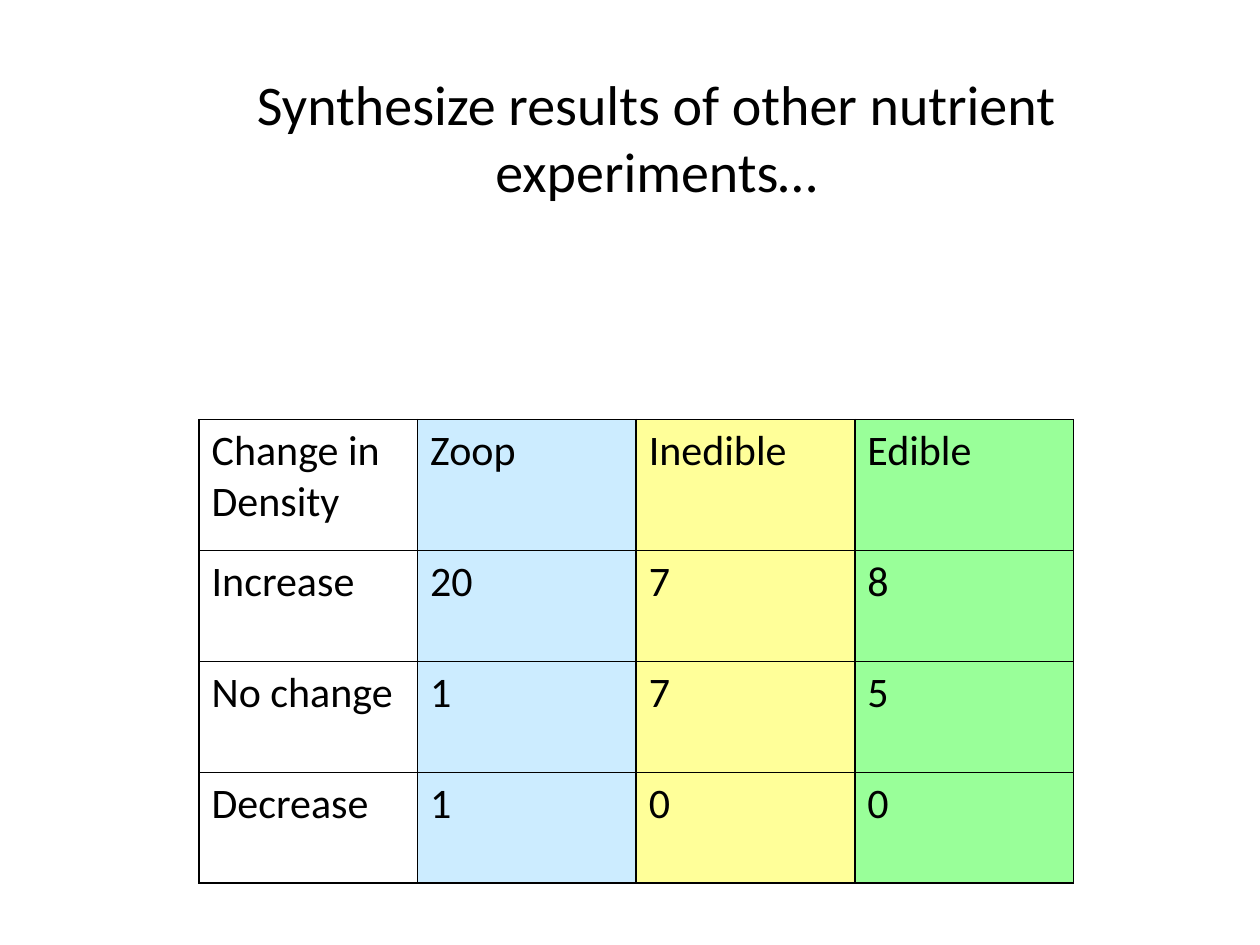
import pptx
import pptx.dml.color
import pptx.enum.text
import pptx.oxml
import pptx.oxml.ns
import pptx.util

Inches = pptx.util.Inches
COLORS = {"ink": "000000", "zoop": "CCECFF", "inedible": "FFFF99", "edible": "99FF99"}
COLUMN_FILLS = [None, "zoop", "inedible", "edible"]
ROW_HEIGHTS = [1.04, 0.88, 0.88, 0.88]
DENSITY_ROWS = [
    ["Change in Density", "Zoop", "Inedible", "Edible"],
    ["Increase", "20", "7", "8"],
    ["No change", "1", "7", "5"],
    ["Decrease", "1", "0", "0"],
]
FORMATS = {
    "title": {"size": pptx.util.Pt(32), "name": "Calibri", "bold": False},
    "cell": {"size": pptx.util.Pt(24), "name": "Calibri", "bold": False},
}


def color(name):
    return pptx.dml.color.RGBColor.from_string(COLORS[name])


def write_text(frame, text, style):
    frame.word_wrap = True
    para = frame.paragraphs[0]
    span = para.add_run()
    span.text = text
    for name, value in FORMATS[style].items():
        setattr(span.font, name, value)
    span.font.color.rgb = color("ink")
    return para


def fill_cell(cell, fill_name):
    properties = cell._tc.get_or_add_tcPr()
    for side in ("lnL", "lnR", "lnT", "lnB"):
        properties.append(pptx.oxml.parse_xml(
            f'<a:{side} {pptx.oxml.ns.nsdecls("a")} w="{pptx.util.Pt(1)}">'
            f'<a:solidFill><a:srgbClr val="{COLORS["ink"]}"/></a:solidFill></a:{side}>'
        ))
    if fill_name:
        cell.fill.solid()
        cell.fill.fore_color.rgb = color(fill_name)
    else:
        cell.fill.background()


def add_title(page, left, top, width, height):
    box = page.shapes.add_textbox(left, top, width, height)
    para = write_text(box.text_frame, "Synthesize results of other nutrient experiments…", "title")
    para.alignment = pptx.enum.text.PP_ALIGN.CENTER


def add_density_table(page, left, top, width, height):
    columns = len(COLUMN_FILLS)
    table = page.shapes.add_table(len(DENSITY_ROWS), columns, left, top, width, height).table
    table.first_row = table.horz_banding = False
    for column in table.columns:
        column.width = width // columns
    for row, share in zip(table.rows, ROW_HEIGHTS):
        row.height = int(height * share / sum(ROW_HEIGHTS))
    for row, texts in zip(table.rows, DENSITY_ROWS):
        for cell, text, fill_name in zip(row.cells, texts, COLUMN_FILLS):
            write_text(cell.text_frame, text, "cell")
            fill_cell(cell, fill_name)


def main():
    deck = pptx.Presentation()
    deck.slide_width, deck.slide_height = Inches(10), Inches(7.5)
    page = deck.slides.add_slide(deck.slide_layouts[6])
    add_title(page, Inches(1), Inches(0.5), Inches(8.42), Inches(1.18))
    add_density_table(page, Inches(1.58), Inches(3.33), Inches(6.94), Inches(3.68))
    deck.save("out.pptx")


if __name__ == "__main__":
    main()
